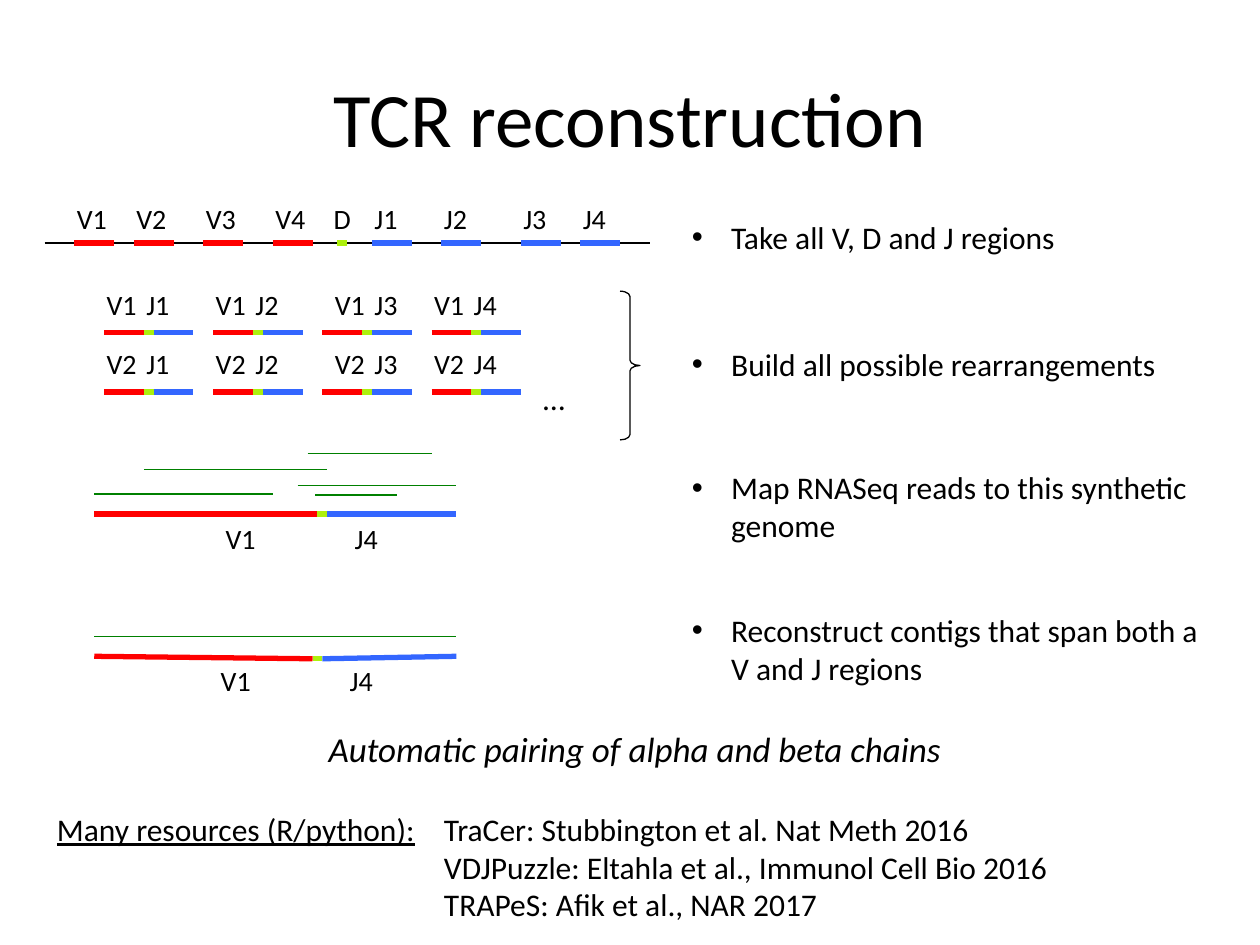
from lxml import etree
from pptx import Presentation
from pptx.dml.color import RGBColor
from pptx.enum import shapes, text
from pptx.oxml import ns
from pptx.util import Cm, Pt

BLACK, RED, BLUE, LIME, GREEN = "000000", "FF0000", "3366FF", "ADF00D", "008000"
GENE, JOINT = 0.8, 0.2


def colour(code):
    """Turn a hex string into a colour."""
    return RGBColor.from_string(code)


def add_line(slide, start, end, code, weight=0.75):
    """Draw a straight line between two points in centimetres."""
    line = slide.shapes.add_connector(
        shapes.MSO_CONNECTOR.STRAIGHT, *(Cm(v) for v in (*start, *end)))
    line.line.color.rgb = colour(code)
    line.line.width = Pt(weight)
    etree.SubElement(line._element.spPr, ns.qn("a:effectLst"))


def add_gene(slide, x, y, width, code):
    """Draw a level gene segment."""
    add_line(slide, (x, y), (x + width, y), code, 3)


def add_words(slide, box, lines, size=16, align=text.PP_ALIGN.LEFT,
              anchor=text.MSO_ANCHOR.TOP, italic=False, underline=False):
    """Place paragraphs in a box and return them."""
    frame = slide.shapes.add_textbox(*(Cm(v) for v in box)).text_frame
    frame.word_wrap = True
    frame.vertical_anchor = anchor
    frame.text = "\n".join(lines)
    for paragraph in frame.paragraphs:
        paragraph.alignment = align
        font = paragraph.font
        font.name, font.size = "Calibri", Pt(size)
        font.italic, font.underline = italic, underline
        font.color.rgb = colour(BLACK)
    return frame.paragraphs


def add_label(slide, x, y, name, width=1.6, align=text.PP_ALIGN.LEFT):
    """Name a gene segment."""
    add_words(slide, (x, y, width, 0.93), [name], align=align)


def add_step(slide, box, wording):
    """Write one bulleted step."""
    props = add_words(slide, box, [wording], 18)[0]._p.get_or_add_pPr()
    props.set("marL", str(Cm(0.79)))
    props.set("indent", str(-Cm(0.79)))
    etree.SubElement(props, ns.qn("a:buFont")).set("typeface", "Arial")
    etree.SubElement(props, ns.qn("a:buChar")).set("char", "•")


def add_germline(slide, left, top, width):
    """Draw the germline locus with its V, D and J regions."""
    axis = top + 0.96
    add_line(slide, (left, axis), (left + width, axis), BLACK)
    for family, code, offsets in (("V", RED, (0.6, 1.8, 3.2, 4.6)),
                                  ("J", BLUE, (6.6, 8, 9.6, 10.8))):
        for number, offset in enumerate(offsets, 1):
            add_gene(slide, left + offset, axis, GENE, code)
            add_label(slide, left + offset - 0.2, top, f"{family}{number}")
    add_gene(slide, left + 5.9, axis, JOINT, LIME)
    add_label(slide, left + 5.2, top, "D", align=text.PP_ALIGN.CENTER)


def add_rearrangements(slide, left, top):
    """Draw the grid of V and J combinations with its brace."""
    for row, v_gene in enumerate(("V1", "V2")):
        label_top = top + 1.2 * row
        axis = label_top + 1.03
        for column, nudge in enumerate((0, 0, 0.2, 0)):
            x = left + 0.2 + 2.2 * column
            add_gene(slide, x, axis, GENE, RED)
            add_gene(slide, x + GENE, axis, JOINT, LIME)
            add_gene(slide, x + GENE + JOINT, axis, GENE, BLUE)
            add_label(slide, x - 0.2 + nudge, label_top, v_gene)
            add_label(slide, x + 0.6 + nudge, label_top, f"J{column + 1}")
    add_words(slide, (left + 8.8, top + 1.85, 1.6, 1.27), ["…"], 18)
    brace = slide.shapes.add_shape(
        shapes.MSO_SHAPE.RIGHT_BRACE,
        *(Cm(v) for v in (left + 10.6, top + 0.2, 0.4, 3)))
    brace.adjustments[0] = 0.271
    brace.shadow.inherit = False
    brace.fill.background()
    brace.line.color.rgb = colour(BLACK)
    brace.line.width = Pt(0.75)


def add_transcript(slide, left, top, width, joint, sag, reads):
    """Draw reads above a joined V1 and J4 transcript."""
    middle, end = top + sag, joint + JOINT
    add_line(slide, (left, top), (left + joint, middle), RED, 3)
    add_line(slide, (left + joint, middle), (left + end, middle), LIME, 3)
    add_line(slide, (left + end, middle), (left + width, top), BLUE, 3)
    for start, stop, height in reads:
        add_line(slide, (left + start, top - height),
                 (left + stop, top - height), GREEN)
    add_label(slide, left + joint - 2.1, top + 0.02, "V1", 1.4)
    add_label(slide, left + joint + 0.5, top + 0.02, "J4", 1.2)


def add_resources(slide, left, top):
    """List the published tools beside their heading."""
    add_words(slide, (left, top, 8, 1.02), ["Many resources (R/python):"],
              18, underline=True)
    add_words(slide, (left + 7.8, top, 13.6, 2.57), [
        "TraCer: Stubbington et al. Nat Meth 2016",
        "VDJPuzzle: Eltahla et al., Immunol Cell Bio 2016",
        "TRAPeS: Afik et al., NAR 2017"], 18)


def main():
    """Build the slide."""
    deck = Presentation()
    deck.slide_width, deck.slide_height = Cm(25.4), Cm(19.05)
    slide = deck.slides.add_slide(deck.slide_layouts[6])
    centre = text.PP_ALIGN.CENTER
    add_words(slide, (1.27, 0.76, 22.86, 3.18), ["TCR reconstruction"], 44,
              centre, text.MSO_ANCHOR.MIDDLE)
    add_germline(slide, 0.9, 3.94, 12.2)
    add_rearrangements(slide, 1.9, 5.67)
    add_transcript(slide, 1.9, 10.36, 7.3, 4.5, 0, (
        (4.1, 7.3, 0.58), (4.45, 6.1, 0.38), (4.3, 6.8, 1.22),
        (1, 4.7, 0.89), (0, 3.6, 0.4)))
    add_transcript(slide, 1.9, 13.23, 7.3, 4.4, 0.05, ((0, 7.3, 0.4),))
    for top, width, height, wording in (
            (4.27, 10.4, 1.02, "Take all V, D and J regions"),
            (6.83, 11.2, 1.02, "Build all possible rearrangements"),
            (9.32, 11.2, 1.8, "Map RNASeq reads to this synthetic genome"),
            (12.19, 11.2, 1.8,
             "Reconstruct contigs that span both a V and J regions")):
        add_step(slide, (13.7, top, width, height), wording)
    add_words(slide, (2.1, 14.55, 21.4, 1.12),
              ["Automatic pairing of alpha and beta chains"], 20, centre,
              italic=True)
    add_resources(slide, 0.9, 16.2)
    deck.save("out.pptx")


if __name__ == "__main__":
    main()
